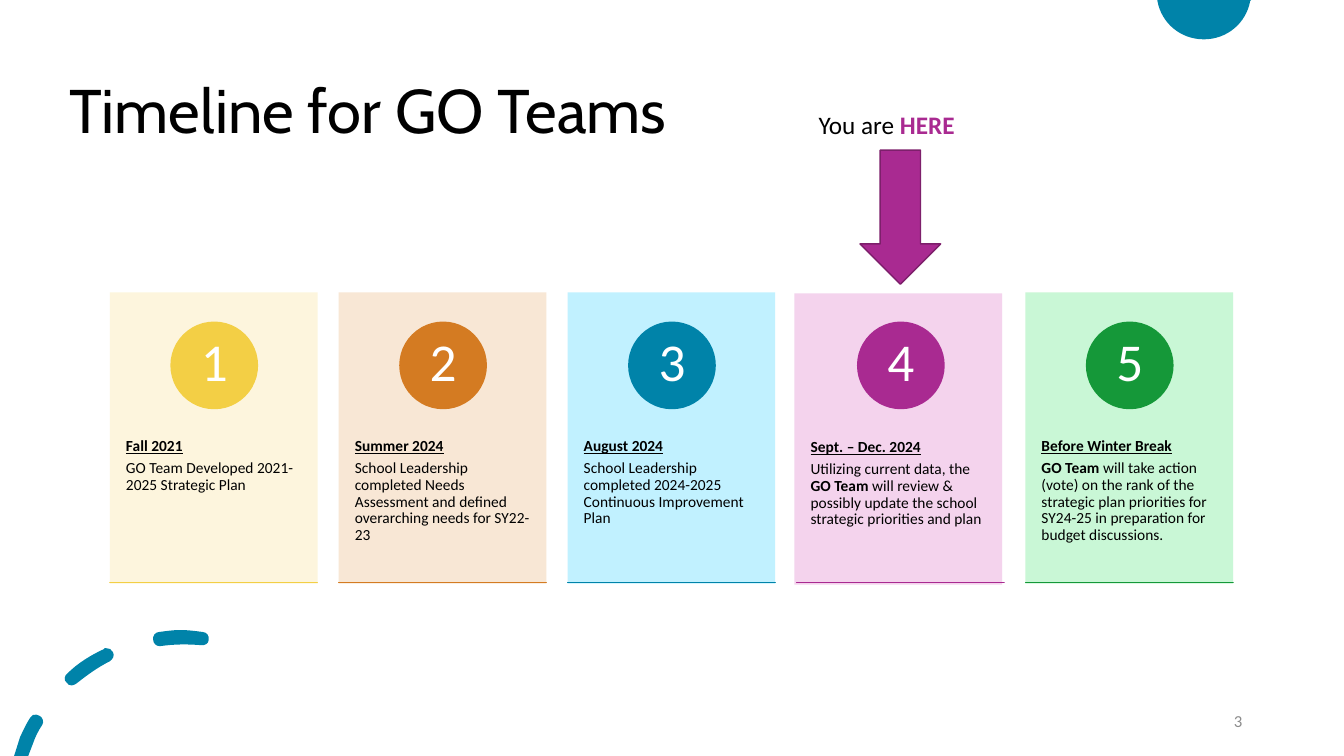
"""Build the GO Teams timeline slide."""
from lxml import etree
from pptx import Presentation
from pptx import util as u
from pptx.dml.color import RGBColor
from pptx.enum import shapes, text
from pptx.oxml.ns import qn

INK = {"black": "000000", "white": "FFFFFF", "gray": "8C8C8C", "teal": "0083A9",
       "plum": "A92A91", "edge": "7D1F6B"}
TITLE = "Timeline for GO Teams"
PAGE = "3"
HERE = [("You are ", False), ("HERE", True)]
CARDS = [
    ("Fall 2021", [("GO Team Developed 2021-2025 Strategic Plan", False)],
     "F3CF45", "FDF5DA", (0, 0)),
    ("Summer 2024", [("School Leadership completed Needs Assessment and defined "
                      "overarching needs for SY22-23", False)],
     "D47B22", "F8E5D1", (0, 0)),
    ("August 2024", [("School Leadership completed 2024-2025 Continuous "
                      "Improvement Plan", False)],
     "0083A9", "BBF0FF", (0, 0)),
    ("Sept. – Dec. 2024", [("Utilizing current data, the ", False), ("GO Team ", True),
                           ("will review & possibly update the school strategic "
                            "priorities and plan", False)],
     "A92A91", "F3CFEC", (-0.02, 0.01)),
    ("Before Winter Break", [("GO Team ", True),
                             ("will take action (vote) on the rank of the strategic plan "
                              "priorities for SY24-25 in preparation for budget "
                              "discussions.", False)],
     "159839", "C4F7D2", (0, 0)),
]
BOWL = [
    [(11.48, 0), (12.41, 0), (12.4, 0.01), (12.36, 0.23, 12.17, 0.39, 11.94, 0.39),
     (11.71, 0.39, 11.52, 0.23, 11.48, 0.01)],
]
DASHES = [
    [(0.36, 7.09), (0.34, 7.08, 0.31, 7.1, 0.3, 7.12), (0.26, 7.18, 0.23, 7.25, 0.2, 7.31),
     (0.14, 7.5), (0.28, 7.5), (0.33, 7.37), (0.35, 7.31, 0.38, 7.25, 0.42, 7.19),
     (0.44, 7.16, 0.42, 7.11, 0.39, 7.1), (0.38, 7.09, 0.37, 7.09, 0.36, 7.09)],
    [(1.05, 6.43), (1.04, 6.43, 1.03, 6.43, 1.03, 6.44), (0.9, 6.5, 0.77, 6.58, 0.67, 6.68),
     (0.64, 6.7, 0.63, 6.75, 0.66, 6.77), (0.67, 6.79, 0.69, 6.8, 0.71, 6.8), (0.71, 6.8),
     (0.73, 6.8, 0.74, 6.79, 0.76, 6.78), (0.86, 6.7, 0.97, 6.62, 1.09, 6.56),
     (1.12, 6.54, 1.14, 6.5, 1.12, 6.47), (1.11, 6.44, 1.08, 6.43, 1.05, 6.43)],
    [(1.79, 6.25), (1.72, 6.25, 1.65, 6.26, 1.58, 6.27), (1.54, 6.27, 1.51, 6.31, 1.52, 6.35),
     (1.52, 6.38, 1.55, 6.41, 1.58, 6.41), (1.59, 6.41, 1.59, 6.41, 1.59, 6.41),
     (1.73, 6.39, 1.86, 6.39, 1.99, 6.4), (2.03, 6.41, 2.07, 6.38, 2.07, 6.35),
     (2.08, 6.31, 2.05, 6.27, 2.01, 6.27), (2.01, 6.27, 2.01, 6.27, 2.01, 6.27),
     (1.94, 6.26, 1.86, 6.25, 1.79, 6.25)],
]
LEFT, TOP, WIDE, HIGH, PITCH = 1.09, 2.9, 2.06, 2.89, 2.27
DISC, DIGIT = 0.87, 0.61
KIND = shapes.MSO_SHAPE
MIDDLE = text.MSO_ANCHOR.MIDDLE


def box(*sides):
    return [u.Inches(side) for side in sides]


def paint(shape, fill, line=None):
    shape.shadow.inherit = False
    shape.fill.solid()
    shape.fill.fore_color.rgb = RGBColor.from_string(fill)
    if line:
        shape.line.color.rgb = RGBColor.from_string(line)
        shape.line.width = u.Pt(1)
    else:
        shape.line.fill.background()


def style(run, size, color=INK["black"], bold=False, face="Calibri"):
    font = run.font
    font.name, font.size, font.bold = face, u.Pt(size), bold
    font.color.rgb = RGBColor.from_string(color)


def write(par, parts, size, color=INK["black"], strong=None):
    for words, bold in parts:
        run = par.add_run()
        run.text = words
        style(run, size, strong if bold and strong else color, bold)


def label(slide, place, inset=(0.1, 0.05), anchor=text.MSO_ANCHOR.TOP):
    frame = slide.shapes.add_textbox(*box(*place)).text_frame
    frame.word_wrap = True
    frame.auto_size = text.MSO_AUTO_SIZE.NONE
    frame.vertical_anchor = anchor
    frame.margin_left = frame.margin_right = u.Inches(inset[0])
    frame.margin_top = frame.margin_bottom = u.Inches(inset[1])
    return frame


def outline(slide, contours):
    """Draw closed contours; parts of six numbers become curves."""
    pen = None
    for contour in contours:
        ends = [box(*part[-2:]) for part in contour]
        if pen:
            pen.move_to(*ends[0])
        else:
            pen = slide.shapes.build_freeform(*ends[0], scale=1.0)
        pen.add_line_segments(ends[1:], close=True)
    shape = pen.convert_to_shape()
    paint(shape, INK["teal"])
    parts = [part for contour in contours for part in contour[1:]]
    for part, line in zip(parts, list(shape._element.iter(qn("a:lnTo")))):
        if len(part) == 6:
            line.tag = qn("a:cubicBezTo")
            for spot, (x, y) in enumerate((part[:2], part[2:4])):
                point = etree.Element(qn("a:pt"), x=str(u.Inches(x) - shape.left),
                                      y=str(u.Inches(y) - shape.top))
                line.insert(spot, point)


def card(slide, index, head, body, color, pale, shift):
    left = LEFT + PITCH * index
    x, y = left + shift[0], TOP + shift[1]
    panel = slide.shapes.add_shape(KIND.RECTANGLE, *box(x, y, WIDE, HIGH))
    paint(panel, pale)
    tint = panel._element.spPr.find(qn("a:solidFill"))[0]
    etree.SubElement(tint, qn("a:alpha"), val="90000")

    frame = label(slide, (x, y + 1.09, WIDE, 1.73), (0.16, 0.36))
    first, second = frame.paragraphs[0], frame.add_paragraph()
    write(first, [(head, True)], 11)
    first.runs[0].font.underline = True
    write(second, body, 11)
    for par in (first, second):
        par.line_spacing, par.space_after = 0.9, u.Pt(3.85)

    disc = slide.shapes.add_shape(KIND.OVAL, *box(left + 0.6, TOP + 0.29, DISC, DISC))
    paint(disc, color)
    inner = (DISC - DIGIT) / 2
    frame = label(slide, (left + 0.6 + inner, TOP + 0.28 + inner, DIGIT, DIGIT),
                  (0.07, 0.01), MIDDLE)
    par = frame.paragraphs[0]
    par.alignment, par.line_spacing = text.PP_ALIGN.CENTER, 0.9
    write(par, [(str(index + 1), False)], 38, INK["white"])

    rule = slide.shapes.add_shape(KIND.RECTANGLE, *box(left, 5.78, WIDE, 0))
    paint(rule, color, color)


def main():
    deck = Presentation()
    deck.slide_width, deck.slide_height = box(13.33, 7.5)
    slide = deck.slides.add_slide(deck.slide_layouts[5])
    outline(slide, BOWL)
    outline(slide, DASHES)

    title = slide.shapes.title
    title.left, title.top, title.width, title.height = box(0.59, 0.4, 11.5, 1.45)
    title.text_frame.text = TITLE
    title.text_frame.vertical_anchor = MIDDLE
    par = title.text_frame.paragraphs[0]
    par.alignment, par.line_spacing = text.PP_ALIGN.LEFT, 0.9
    style(par.runs[0], 44, face="Cabin")

    for index, entry in enumerate(CARDS):
        card(slide, index, *entry)

    frame = label(slide, (9.42, 6.95, 3, 0.4), anchor=MIDDLE)
    frame.paragraphs[0].alignment = text.PP_ALIGN.RIGHT
    write(frame.paragraphs[0], [(PAGE, False)], 12, INK["gray"])

    arrow = slide.shapes.add_shape(KIND.DOWN_ARROW, *box(8.53, 1.49, 0.8, 1.33))
    paint(arrow, INK["plum"], INK["edge"])
    frame = label(slide, (8.02, 1.04, 1.82, 0.4))
    frame.auto_size = text.MSO_AUTO_SIZE.SHAPE_TO_FIT_TEXT
    write(frame.paragraphs[0], HERE, 18, strong=INK["plum"])
    deck.save("out.pptx")


if __name__ == "__main__":
    main()
